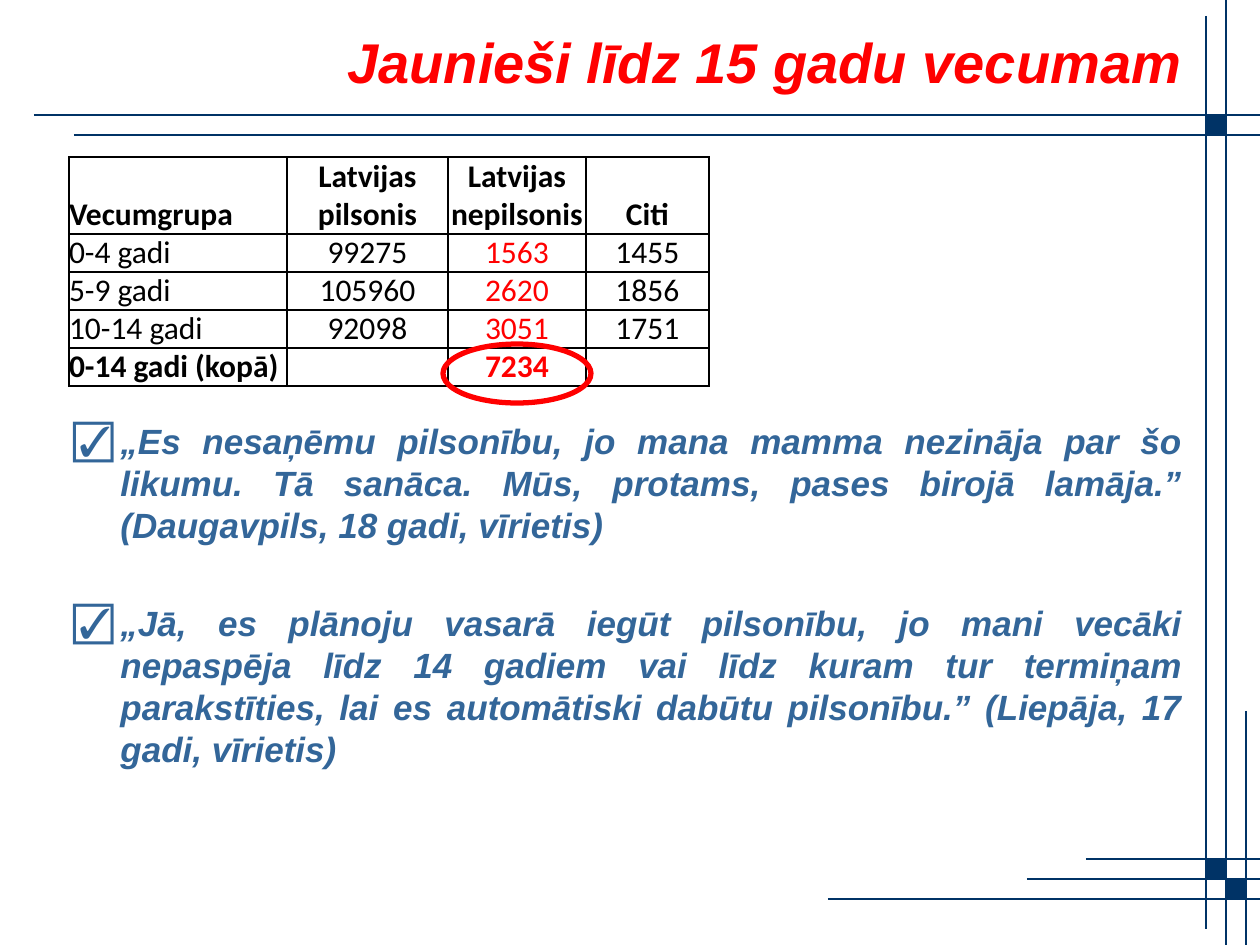
from lxml import etree
from pptx import Presentation
from pptx.dml.color import RGBColor
from pptx.enum.shapes import MSO_CONNECTOR, MSO_SHAPE
from pptx.enum.text import MSO_ANCHOR, PP_ALIGN
from pptx.oxml.ns import qn
from pptx.util import Emu, Pt

STRAIGHT = MSO_CONNECTOR.STRAIGHT
RECTANGLE, OVAL = MSO_SHAPE.RECTANGLE, MSO_SHAPE.OVAL
MIDDLE, BOTTOM = MSO_ANCHOR.MIDDLE, MSO_ANCHOR.BOTTOM
LEFT, CENTER, RIGHT, JUSTIFY = PP_ALIGN.LEFT, PP_ALIGN.CENTER, PP_ALIGN.RIGHT, PP_ALIGN.JUSTIFY

SCALE = 914400 / 126
WIDTH, HEIGHT = 1260, 945
NAVY, BLUE, RED, BLACK = "003366", "336699", "FF0000", "000000"

TITLE_FORMAT = {"name": "Arial", "size": Pt(32), "bold": True, "italic": True}
QUOTE_FORMAT = {"name": "Arial", "size": Pt(20), "bold": True, "italic": True}
CELL_FORMAT = {"name": "Calibri", "size": Pt(18)}

COLUMN_WIDTHS = [218, 161, 138, 123]
ROW_HEIGHTS = [77, 38, 38, 38, 38]
AGE_GROUPS = [
    ["Vecumgrupa", "Latvijas pilsonis", "Latvijas nepilsonis", "Citi"],
    ["0-4 gadi", "99275", "1563", "1455"],
    ["5-9 gadi", "105960", "2620", "1856"],
    ["10-14 gadi", "92098", "3051", "1751"],
    ["0-14 gadi (kopā)", "", "7234", ""],
]
QUOTES = [
    "„Es nesaņēmu pilsonību, jo mana mamma nezināja par šo likumu. Tā sanāca. "
    "Mūs, protams, pases birojā lamāja.” (Daugavpils, 18 gadi, vīrietis)",
    "„Jā, es plānoju vasarā iegūt pilsonību, jo mani vecāki nepaspēja līdz 14 gadiem "
    "vai līdz kuram tur termiņam parakstīties, lai es automātiski dabūtu pilsonību.” "
    "(Liepāja, 17 gadi, vīrietis)",
]


def px(length):
    return Emu(round(length * SCALE))


def rgb(color):
    return RGBColor.from_string(color)


def add_run(paragraph, text, color, values):
    run = paragraph.add_run()
    run.text = text
    run.font.color.rgb = rgb(color)
    for attribute, value in values.items():
        setattr(run.font, attribute, value)


def add_rule(slide, x1, y1, x2, y2):
    rule = slide.shapes.add_connector(STRAIGHT, px(x1), px(y1), px(x2), px(y2))
    rule.line.color.rgb = rgb(NAVY)
    rule.line.width = Pt(0.75)
    etree.SubElement(rule._element.spPr, qn("a:effectLst"))


def add_outlined(slide, kind, box, color, weight, filled):
    outlined = slide.shapes.add_shape(kind, *map(px, box))
    outlined.shadow.inherit = False
    outlined.line.color.rgb = rgb(color)
    outlined.line.width = Pt(weight)
    if filled:
        outlined.fill.solid()
        outlined.fill.fore_color.rgb = rgb(color)
    else:
        outlined.fill.background()


def draw_frame(slide, left, top, width, height):
    right, bottom, side = left + width, top + height, 20
    inner, outer = right - 54, right - 34
    upper, lower = top + 115, bottom - 86
    rows = [(34, upper), (74, upper + side), (1086, lower),
            (1027, lower + side), (828, lower + 2 * side)]
    columns = [(inner, top + 16, bottom - 16), (outer, top, bottom),
               (outer + side, bottom - 234, bottom)]
    for start, y in rows:
        add_rule(slide, left + start, y, right, y)
    for x, start, end in columns:
        add_rule(slide, x, start, x, end)
    for x, y in [(inner, upper), (inner, lower), (outer, lower + side)]:
        add_outlined(slide, RECTANGLE, (x, y, side, side), NAVY, 0.75, True)


def draw_title(slide, left, top, width, height):
    frame = slide.shapes.add_textbox(px(left), px(top), px(width), px(height)).text_frame
    frame.word_wrap = True
    frame.vertical_anchor = MIDDLE
    heading = frame.paragraphs[0]
    heading.alignment = RIGHT
    add_run(heading, "Jaunieši līdz 15 gadu vecumam", RED, TITLE_FORMAT)


def draw_quotes(slide, left, top, width, height):
    frame = slide.shapes.add_textbox(px(left), px(top), px(width), px(height)).text_frame
    frame.word_wrap = True
    for index, text in enumerate(QUOTES):
        quote = frame.add_paragraph() if index else frame.paragraphs[0]
        quote.alignment = JUSTIFY
        quote.line_spacing = Pt(24)
        quote.space_before = Pt(32 if index else 0)
        properties = quote._p.get_or_add_pPr()
        properties.set("marL", str(px(48)))
        properties.set("indent", str(px(-48)))
        etree.SubElement(properties, qn("a:buSzPct"), val="120000")
        etree.SubElement(properties, qn("a:buFont"), typeface="Arial")
        etree.SubElement(properties, qn("a:buChar"), char="☑")
        add_run(quote, text, BLUE, QUOTE_FORMAT)


def add_borders(cell):
    properties = cell._tc.get_or_add_tcPr()
    for index, side in enumerate(["lnL", "lnR", "lnT", "lnB"]):
        border = etree.Element(qn(f"a:{side}"), w=str(Pt(1)))
        fill = etree.SubElement(border, qn("a:solidFill"))
        etree.SubElement(fill, qn("a:srgbClr"), val=BLACK)
        properties.insert(index, border)


def draw_age_table(slide, left, top):
    table = slide.shapes.add_table(
        len(ROW_HEIGHTS), len(COLUMN_WIDTHS), px(left), px(top),
        px(sum(COLUMN_WIDTHS)), px(sum(ROW_HEIGHTS))).table
    table.first_row = table.horz_banding = False
    for column, width in zip(table.columns, COLUMN_WIDTHS):
        column.width = px(width)
    last = len(AGE_GROUPS) - 1
    for r, values in enumerate(AGE_GROUPS):
        table.rows[r].height = px(ROW_HEIGHTS[r])
        for c, text in enumerate(values):
            cell = table.cell(r, c)
            cell.fill.background()
            cell.vertical_anchor = BOTTOM
            for side in ("left", "right", "top", "bottom"):
                setattr(cell, f"margin_{side}", 0)
            add_borders(cell)
            entry = cell.text_frame.paragraphs[0]
            entry.alignment = CENTER if c else LEFT
            if text:
                color = RED if r and c == 2 else BLACK
                add_run(entry, text, color, {**CELL_FORMAT, "bold": r in (0, last)})
    total_left = left + sum(COLUMN_WIDTHS[:2])
    total_top = top + sum(ROW_HEIGHTS[:last])
    ring = (total_left - 5, total_top - 4, COLUMN_WIDTHS[2] + 10, 59)
    add_outlined(slide, OVAL, ring, RED, 3, False)


def main():
    deck = Presentation()
    deck.slide_width, deck.slide_height = px(WIDTH), px(HEIGHT)
    slide = deck.slides.add_slide(deck.slide_layouts[6])
    draw_frame(slide, 0, 0, WIDTH, HEIGHT)
    draw_title(slide, 64, 16, 1131, 90)
    draw_quotes(slide, 60, 413, 1135, 384)
    draw_age_table(slide, 69, 157)
    deck.save("out.pptx")


if __name__ == "__main__":
    main()
